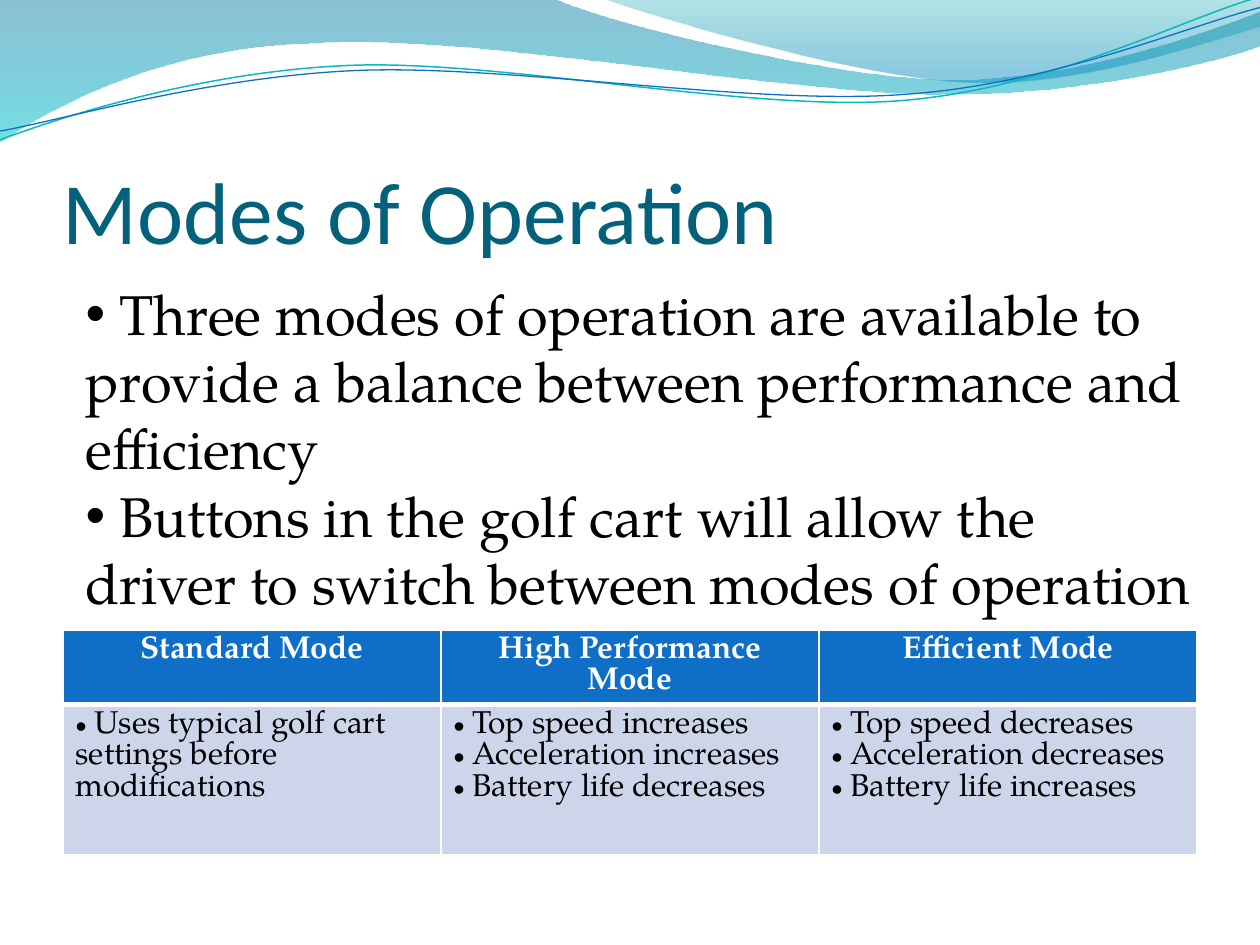
from math import cos, radians, sin

from lxml.etree import SubElement
from pptx import Presentation
from pptx.dml.color import RGBColor
from pptx.enum.text import MSO_ANCHOR, MSO_AUTO_SIZE, PP_ALIGN
from pptx.oxml.ns import qn
from pptx.util import Pt

WHITE = RGBColor(0xFF, 0xFF, 0xFF)
BLACK = RGBColor(0, 0, 0)
TITLE_TEAL = RGBColor(0x04, 0x61, 0x7B)
BLUE = RGBColor(0x0F, 0x6F, 0xC6)
TEAL = RGBColor(0x0A, 0xB8, 0xBF)
PALE_BLUE = RGBColor(0xCC, 0xD5, 0xEA)
WAVE_BLUE = RGBColor(0x00, 0x74, 0xA1)
WAVE_CYAN = RGBColor(0x00, 0xC6, 0xCF)
CREST_TEAL = RGBColor(0x00, 0xA1, 0xA9)
CREST_BLUE = RGBColor(0x00, 0x8B, 0xBF)

HEADING_FONT = "Calibri"
BODY_FONT = "TeX Gyre Pagella"
CURVE_TILT = 357.3

BACK_WAVE = [
    (-0.7, -0.7), (316.8, -0.7),
    (342.7, 12.2, 478.1, 45.4, 545.8, 45.4),
    (614.2, 45.4, 689.8, 18.7, 720, 6.5),
    (720.7, 25.9),
    (707.8, 31.7, 626.4, 54.7, 537.1, 54),
    (447.8, 54, 275, 20.2, 185, 24.5),
    (92.9, 25.9, 33.1, 59.8, -0.7, 81.4),
    (-0.7, -0.7),
]
FRONT_WAVE = [
    (344.9, -0.7),
    (366.5, 7.9, 491, 44.6, 553.7, 46.8),
    (616.3, 49.7, 691.9, 23, 720, 15.1),
    (720, -0.7), (344.9, -0.7),
]
TEAL_CURVE = [
    (0, 79.9),
    (34.6, 67, 113.8, 41, 199.4, 37.4),
    (284.4, 33.8, 427, 64.1, 513.4, 57.6),
    (599.8, 51.1, 675.4, 10.8, 718.6, -1.4),
]
BLUE_CURVE = [
    (0, 74.9),
    (33.8, 69.1, 118.1, 43.9, 203.8, 40.3),
    (290.2, 36.7, 429.8, 60.5, 516.2, 54),
    (601.9, 48.2, 677.5, 15.1, 720, 4.3),
]

STATEMENTS = [
    " Three modes of operation are available to provide a balance between performance and efficiency",
    " Buttons in the golf cart will allow the driver to switch between modes of operation",
]
MODES = {
    "Standard Mode": [" Uses typical golf cart settings before modifications"],
    "High Performance Mode": [
        " Top speed increases", " Acceleration increases", " Battery life decreases"],
    "Efficient Mode": [
        " Top speed decreases", " Acceleration decreases", " Battery life increases"],
}


def apply_format(target, values):
    for name, value in values.items():
        setattr(target, name, value)


def to_local(x, y, frame, tilt):
    left, top, width, height = frame
    across, down = x - left - width / 2, y - top - height / 2
    angle = radians(-tilt)
    return (Pt(across * cos(angle) - down * sin(angle) + width / 2),
            Pt(across * sin(angle) + down * cos(angle) + height / 2))


def add_outline(page, frame, steps, tilt=0, close=False):
    left, top, width, height = frame
    builder = page.shapes.build_freeform(Pt(left), Pt(top))
    builder.add_line_segments([(Pt(left + width), Pt(top + height))], close=close)
    shape = builder.convert_to_shape()
    apply_format(shape, {"rotation": tilt})
    shape.shadow.inherit = False
    outline = next(shape._element.iter(qn("a:path")))
    for child in list(outline):
        outline.remove(child)
    for index, step in enumerate(steps):
        kind = "cubicBezTo" if len(step) == 6 else "lnTo" if index else "moveTo"
        command = SubElement(outline, qn(f"a:{kind}"))
        for x, y in zip(step[::2], step[1::2]):
            local_x, local_y = to_local(x, y, frame, tilt)
            SubElement(command, qn("a:pt"), x=str(local_x), y=str(local_y))
    if close:
        SubElement(outline, qn("a:close"))
    return shape


def add_wave(page, frame, steps, stops):
    shape = add_outline(page, frame, steps, close=True)
    shape.line.fill.background()
    shape.fill.gradient()
    shape.fill.gradient_angle = 270
    for stop, (position, color, opacity) in zip(shape.fill.gradient_stops, stops):
        stop.position = position
        stop.color.rgb = color
    elements = shape._element.iter(qn("a:srgbClr"))
    for element, (position, color, opacity) in zip(elements, stops):
        SubElement(element, qn("a:alpha"), val=str(opacity * 1000))


def add_curve(page, frame, steps, color, width):
    shape = add_outline(page, frame, steps, tilt=CURVE_TILT)
    shape.fill.background()
    shape.line.color.rgb = color
    shape.line.width = Pt(width)


def write_paragraphs(frame, texts, font, bullet=False, layout=None):
    for index, text in enumerate(texts):
        para = frame.add_paragraph() if index else frame.paragraphs[0]
        apply_format(para, layout or {})
        if bullet:
            properties = para._p.get_or_add_pPr()
            SubElement(properties, qn("a:buFont"), typeface="Arial")
            SubElement(properties, qn("a:buChar"), char="•")
        span = para.add_run()
        span.text = text
        apply_format(span.font, {key: font[key] for key in font if key != "color"})
        span.font.color.rgb = font["color"]


def add_text(page, place, texts, font, frame_format, bullet=False):
    box = page.shapes.add_textbox(*(Pt(value) for value in place))
    apply_format(box.text_frame, {"word_wrap": True, **frame_format})
    write_paragraphs(box.text_frame, texts, font, bullet)


def add_borders(cell, widths):
    properties = cell._tc.get_or_add_tcPr()
    for side, width in widths.items():
        line = SubElement(properties, qn(f"a:ln{side}"), w=str(Pt(width)))
        fill = SubElement(line, qn("a:solidFill"))
        SubElement(fill, qn("a:srgbClr"), val=str(WHITE))


def fill_cell(cell, texts, fill, font, margin, borders, align, bullet=False):
    apply_format(cell, {"margin_top": Pt(margin), "margin_bottom": Pt(margin)})
    add_borders(cell, borders)
    cell.fill.solid()
    cell.fill.fore_color.rgb = fill
    write_paragraphs(cell.text_frame, texts, font, bullet,
                     {"alignment": align, "line_spacing": Pt(18)})


def add_mode_table(page):
    table = page.shapes.add_table(
        2, len(MODES), Pt(36), Pt(360), Pt(648), Pt(128.2)).table
    for row, height in zip(table.rows, (42.5, 85.7)):
        row.height = Pt(height)
    font = {"name": BODY_FONT, "size": Pt(18)}
    for column, (mode, effects) in enumerate(MODES.items()):
        fill_cell(table.cell(0, column), [mode], BLUE,
                  {**font, "bold": True, "color": WHITE}, 2.7,
                  {"L": 1, "R": 1, "T": 1, "B": 3}, PP_ALIGN.CENTER)
        fill_cell(table.cell(1, column), effects, PALE_BLUE,
                  {**font, "bold": False, "color": BLACK}, 3.6,
                  {"L": 1, "R": 1, "T": 3, "B": 1}, PP_ALIGN.LEFT, bullet=True)


def main():
    deck = Presentation()
    apply_format(deck, {"slide_width": Pt(720), "slide_height": Pt(540)})
    page = deck.slides.add_slide(deck.slide_layouts[6])
    add_wave(page, (-0.7, -0.7, 721.4, 82.1), BACK_WAVE,
             [(0, WAVE_BLUE, 45), (1, WAVE_CYAN, 55)])
    add_wave(page, (344.9, -0.7, 375.1, 50.4), FRONT_WAVE,
             [(0, CREST_TEAL, 30), (0.8, CREST_BLUE, 45)])
    add_curve(page, (-1.4, 15.8, 721.4, 51.1), TEAL_CURVE, TEAL, 0.85)
    add_curve(page, (-1.4, 21.6, 722.2, 41.8), BLUE_CURVE, BLUE, 0.75)
    add_text(page, (36, 59.8, 648, 90), ["Modes of Operation"],
             {"name": HEADING_FONT, "size": Pt(50), "color": TITLE_TEAL},
             {"vertical_anchor": MSO_ANCHOR.BOTTOM, "margin_left": 0,
              "margin_right": 0, "margin_bottom": 0})
    add_mode_table(page)
    add_text(page, (41.8, 156.2, 648, 200.9), STATEMENTS,
             {"name": BODY_FONT, "size": Pt(32), "color": BLACK},
             {"auto_size": MSO_AUTO_SIZE.SHAPE_TO_FIT_TEXT}, bullet=True)
    deck.save("out.pptx")


if __name__ == "__main__":
    main()
